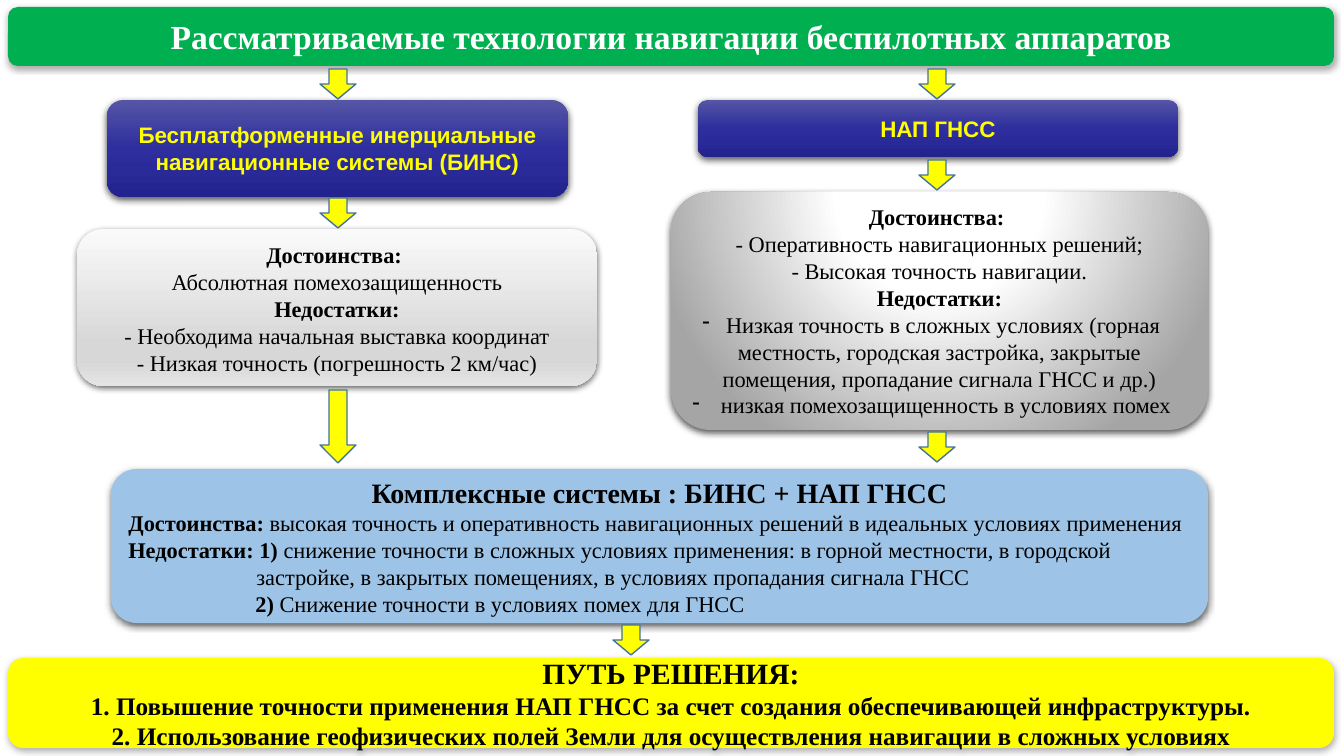
from pptx import Presentation
from pptx.dml.color import RGBColor
from pptx.enum.shapes import MSO_SHAPE
from pptx.enum.text import MSO_ANCHOR, MSO_AUTO_SIZE, PP_ALIGN
from pptx.oxml import parse_xml
from pptx.oxml.ns import nsdecls, qn
from pptx.util import Pt

ROUND, DOWN = MSO_SHAPE.ROUNDED_RECTANGLE, MSO_SHAPE.DOWN_ARROW
MID, TOP = MSO_ANCHOR.MIDDLE, MSO_ANCHOR.TOP
LEFT, MIDDLE = PP_ALIGN.LEFT, PP_ALIGN.CENTER
NONE = MSO_AUTO_SIZE.NONE
SCALE = 914400 / 100.8
SERIF, SANS = "Times New Roman", "Arial"
COLORS = {
    "green": "00B050", "yellow": "FFFF00", "blue": "9DC3E6",
    "edge": "43739E", "white": "FFFFFF", "black": "000000", "gray": "808080",
}
# Gradients: stops, then the XML of their direction
DOWNWARD = '<a:lin ang="5400000" scaled="0"/>'
RADIAL = ('<a:path path="circle"><a:fillToRect l="50000" t="-80000" '
          'r="50000" b="180000"/></a:path>')
GRADS = {
    "navy": ([(0, "5555A6"), (50, "2E2E9E"), (100, "232390")], DOWNWARD),
    "silver": ([(0, "FAFAFA"), (74, "D7D7D7"), (83, "D7D7D7"),
                (100, "E4E4E4")], DOWNWARD),
    "steel": ([(0, "FFFFFF"), (35, "FFFFFF"), (100, "A5A5A5")], RADIAL),
}


def px(n):
    return round(n * SCALE)


def rgb(name):
    return RGBColor.from_string(COLORS[name])


def paint(shape, fill):
    """Fill with a plain colour or a gradient."""
    if fill in COLORS:
        shape.fill.solid()
        shape.fill.fore_color.rgb = rgb(fill)
        return
    stops, way = GRADS[fill]
    marks = "".join(f'<a:gs pos="{at * 1000}"><a:srgbClr val="{tone}"/></a:gs>'
                    for at, tone in stops)
    geom = shape._element.spPr.find(qn("a:prstGeom"))
    geom.addnext(parse_xml(f'<a:gradFill {nsdecls("a")} rotWithShape="1">'
                           f'<a:gsLst>{marks}</a:gsLst>{way}</a:gradFill>'))


def shade(shape, color, blur):
    """Drop a soft shadow straight down."""
    shape.shadow.inherit = False
    effects = shape._element.spPr.find(qn("a:effectLst"))
    effects.append(parse_xml(
        f'<a:outerShdw {nsdecls("a")} blurRad="{Pt(blur)}" dist="{Pt(1.5)}" '
        f'dir="5400000" rotWithShape="0"><a:srgbClr val="{COLORS[color]}">'
        '<a:alpha val="63000"/></a:srgbClr></a:outerShdw>'))


def write(shape, rows, font=SERIF, size=16, color="black", anchor=MID):
    """Each row is a string, or a string and a dict; *stars* mark bold."""
    frame = shape.text_frame
    frame.word_wrap = True
    frame.auto_size = NONE
    frame.vertical_anchor = anchor
    for i, row in enumerate(rows):
        line, opts = (row, {}) if isinstance(row, str) else row
        para = frame.add_paragraph() if i else frame.paragraphs[0]
        para.alignment = opts.get("align", MIDDLE)
        props = para._p.get_or_add_pPr()
        if "indent" in opts:
            margin, first = opts["indent"]
            props.set("marL", str(px(margin)))
            props.set("indent", str(px(first)))
        if "bullet" in opts:
            props.append(parse_xml(
                f'<a:buChar {nsdecls("a")} char="{opts["bullet"]}"/>'))
        for j, part in enumerate(line.split("*")):
            if part:
                run = para.add_run()
                run.text = part
                run.font.name = font
                run.font.size = Pt(opts.get("size", size))
                run.font.bold = j % 2 == 1
                run.font.color.rgb = rgb(color)


def panel(slide, box, fill, rows=(), shadow=("black", 5), **style):
    shape = slide.shapes.add_shape(ROUND, *map(px, box))
    paint(shape, fill)
    shape.line.fill.background()
    shade(shape, *shadow)
    if rows:
        write(shape, rows, **style)
    return shape


def arrow(slide, left, top, height=30):
    shape = slide.shapes.add_shape(DOWN, *map(px, (left, top, 36, height)))
    paint(shape, "yellow")
    shape.line.color.rgb = rgb("edge")
    shape.line.width = Pt(1)
    shape.shadow.inherit = False


def main():
    deck = Presentation()
    deck.slide_width, deck.slide_height = px(1344), px(756)
    slide = deck.slides.add_slide(deck.slide_layouts[5])
    soft = ("gray", 4.5)

    # Title over its green bar
    box = (8, 7, 1326, 59)
    title = slide.shapes.title
    bar = panel(slide, box, "green", shadow=soft)
    title._element.addprevious(bar._element)
    title.left, title.top, title.width, title.height = map(px, box)
    write(title, ["*Рассматриваемые технологии навигации беспилотных аппаратов*"],
          size=24, color="white")

    # Two technologies
    heads = [
        ((107, 100, 461, 97),
         "*Бесплатформенные инерциальные навигационные системы (БИНС)*"),
        ((698, 100, 480, 57), "*НАП ГНСС*"),
    ]
    for box, name in heads:
        panel(slide, box, "navy", [name], font=SANS, color="yellow")

    # Their strong and weak points
    dash = {"bullet": "-"}
    panel(slide, (77, 229, 520, 157), "silver", [
        "*Достоинства: *",
        "Абсолютная помехозащищенность",
        "*Недостатки:*",
        "- Необходима начальная выставка координат",
        "- Низкая точность (погрешность 2 км/час)",
    ], anchor=TOP)
    panel(slide, (671, 192, 537, 238), "steel", [
        "*Достоинства: *",
        "- Оперативность навигационных решений;",
        "- Высокая точность навигации.",
        "*Недостатки:*",
        ("Низкая точность в сложных условиях (горная местность, городская "
         "застройка, закрытые помещения, пропадание сигнала ГНСС и др.)", dash),
        (" низкая помехозащищенность в условиях помех", dash),
    ])

    # Combined systems
    panel(slide, (111, 469, 1097, 154), "blue", [
        ("*Комплексные системы : БИНС + НАП ГНСС*", {"size": 20}),
        ("*Достоинства:* высокая точность и оперативность навигационных "
         "решений в идеальных условиях применения",
         {"align": LEFT, "indent": (7, -7)}),
        ("*Недостатки: 1) *снижение точности в сложных условиях применения: "
         "в горной местности, в городской застройке, в закрытых помещениях, "
         "в условиях пропадания сигнала ГНСС ",
         {"align": LEFT, "indent": (128, -128)}),
        ("*2)* Снижение точности в условиях помех для ГНСС",
         {"align": LEFT, "indent": (7, 120)}),
    ])

    # Way forward
    panel(slide, (8, 658, 1326, 90), "yellow", [
        ("*ПУТЬ РЕШЕНИЯ:*", {"size": 21}),
        "*1. Повышение точности применения НАП ГНСС за счет создания "
        "обеспечивающей инфраструктуры.*",
        "*2. Использование геофизических полей Земли для осуществления "
        "навигации в сложных условиях*",
    ], shadow=soft, size=18)

    # Arrows down each column
    for left, tops in ((320, (69, 198)), (919, (69, 160, 432)), (613, (625,))):
        for top in tops:
            arrow(slide, left, top)
    arrow(slide, 320, 390, height=73)

    deck.save("out.pptx")


main()
